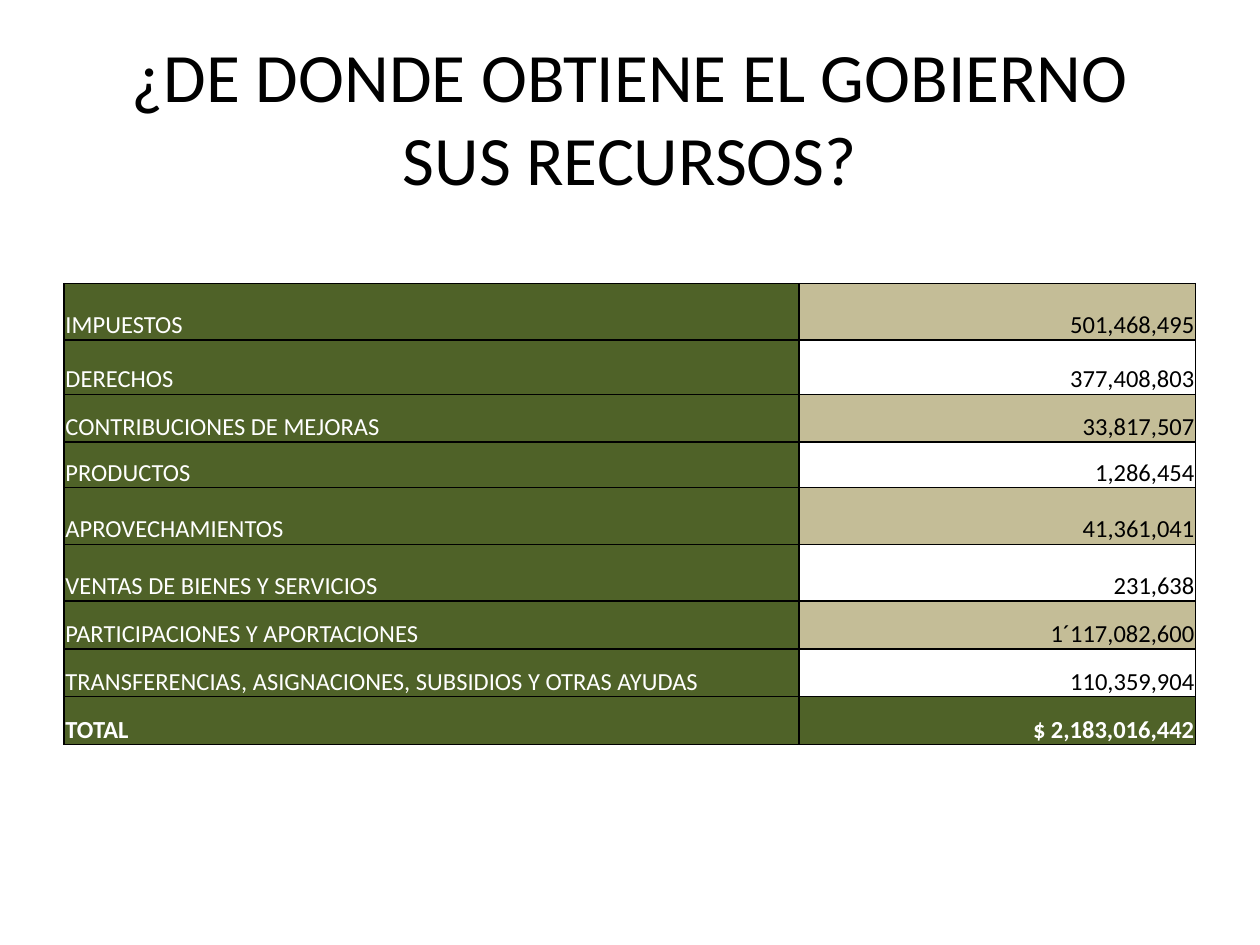
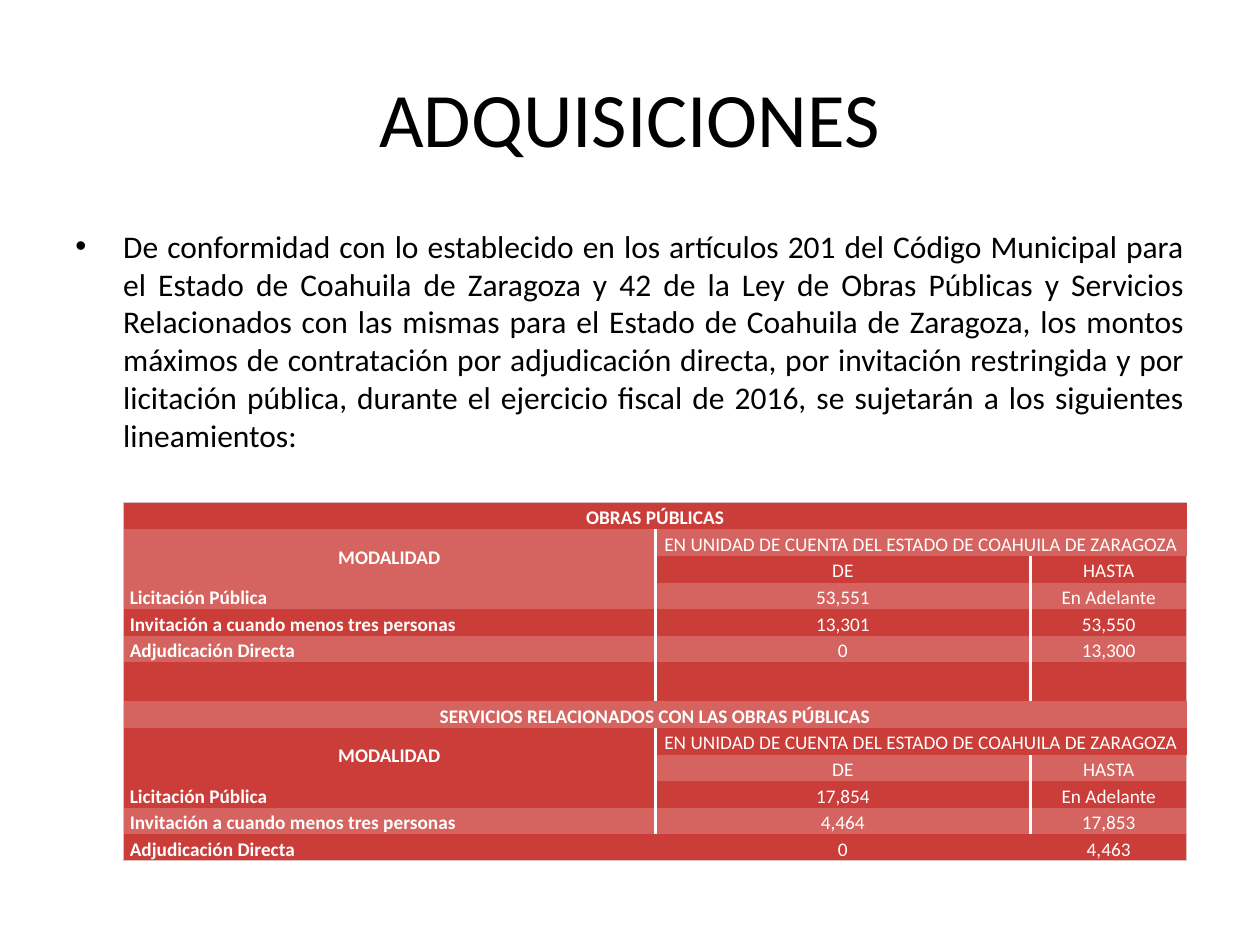
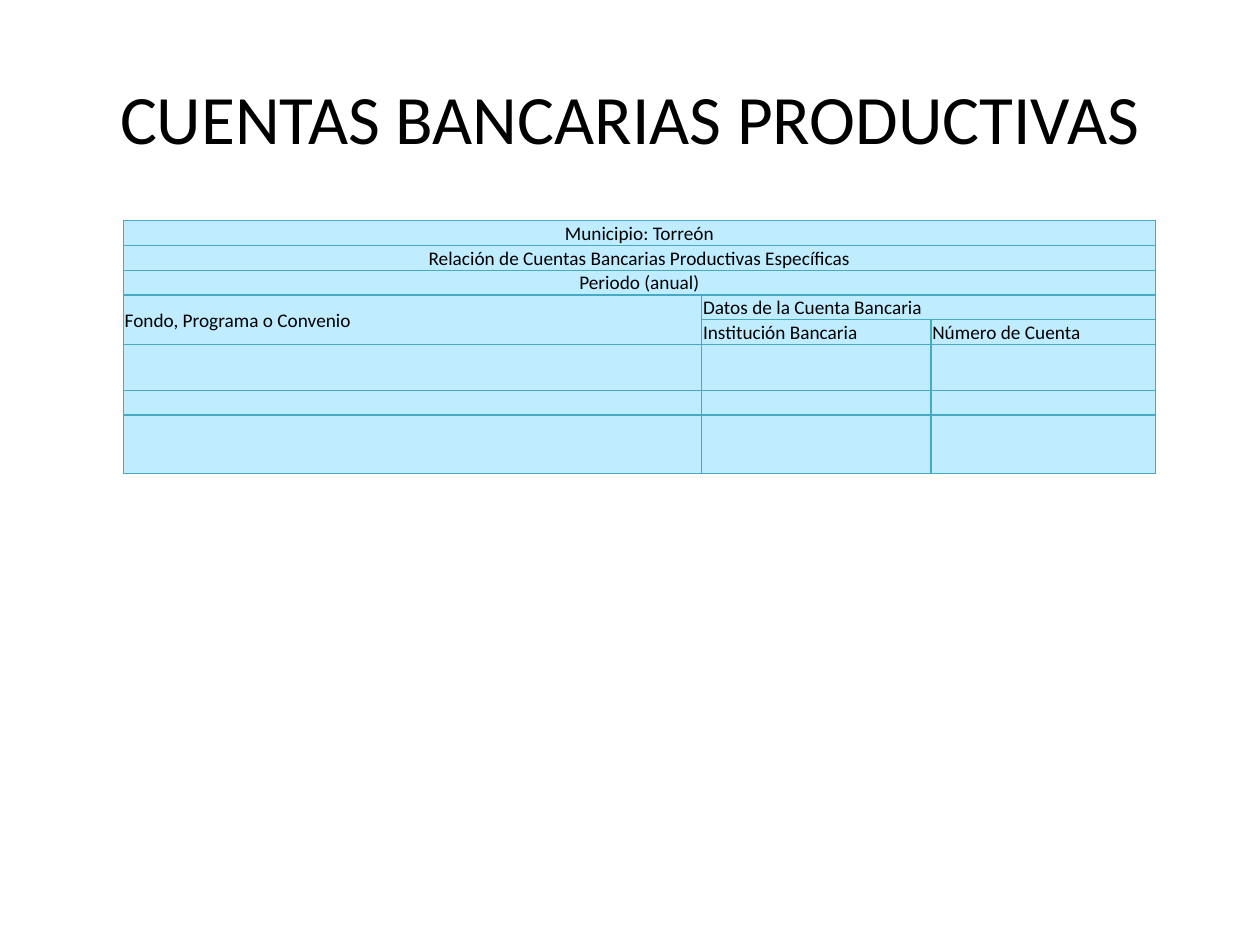
from lxml.etree import SubElement
from pptx import Presentation
from pptx.dml.color import RGBColor
from pptx.enum.text import MSO_ANCHOR, PP_ALIGN
from pptx.oxml.ns import qn
from pptx.util import Inches, Pt

# Shared look: a grid of 40 columns by 30 rows of quarter inches
COLS, ROWS, UNIT = 40, 30, Inches(0.25)
FACE = "Calibri"
BLACK = RGBColor(0x00, 0x00, 0x00)
WHITE = RGBColor(0xFF, 0xFF, 0xFF)
GREEN = RGBColor(0x4F, 0x62, 0x28)
SAND = RGBColor(0xC4, 0xBD, 0x97)
RED = RGBColor(0xCB, 0x3D, 0x39)
ROSE = RGBColor(0xD5, 0x64, 0x60)
PINK = RGBColor(0xDE, 0xBD, 0xBD)
SKY = RGBColor(0xBF, 0xEC, 0xFF)
TEAL = RGBColor(0x46, 0xAA, 0xC5)
PLAIN = "{2D5ABB26-0587-4C30-8999-92F81FD0307C}"  # no style, no grid
LEFT, MID, RIGHT = PP_ALIGN.LEFT, PP_ALIGN.CENTER, PP_ALIGN.RIGHT
SIDES = "LRTB"

INCOME = [
    ("IMPUESTOS", "501,468,495"),
    ("DERECHOS", "377,408,803"),
    ("CONTRIBUCIONES DE MEJORAS", "33,817,507"),
    ("PRODUCTOS", "1,286,454"),
    ("APROVECHAMIENTOS", "41,361,041"),
    ("VENTAS DE BIENES Y SERVICIOS", "231,638"),
    ("PARTICIPACIONES Y APORTACIONES", "1´117,082,600"),
    ("TRANSFERENCIAS, ASIGNACIONES, SUBSIDIOS Y OTRAS AYUDAS", "110,359,904"),
    ("TOTAL", "$ 2,183,016,442"),
]
RULE = (
    "De conformidad con lo establecido en los artículos 201 del Código Municipal "
    "para el Estado de Coahuila de Zaragoza y 42 de la Ley de Obras Públicas y "
    "Servicios Relacionados con las mismas para el Estado de Coahuila de Zaragoza, "
    "los montos máximos de contratación por adjudicación directa, por invitación "
    "restringida y por licitación pública, durante el ejercicio fiscal de 2016, se "
    "sujetarán a los siguientes lineamientos:"
)
ACCOUNTS = [
    ("Municipio: Torreón", "", ""),
    ("Relación de Cuentas Bancarias Productivas Específicas", "", ""),
    ("Periodo (anual)", "", ""),
    ("Fondo, Programa o Convenio", "Datos de la Cuenta Bancaria", ""),
    ("", "Institución Bancaria", "Número de Cuenta"),
] + [("", "", "")] * 3


def grid(*spans):
    return [round(span * UNIT) for span in spans]


def style(font, color, **form):
    form = {"name": FACE, **form}
    for key, value in form.items():
        setattr(font, key, value)
    font.color.rgb = color


def write(frame, words, color, align, size, bold=False, gap=None):
    para = frame.paragraphs[0]
    para.alignment = align
    if gap:
        para.line_spacing = gap
    if words:
        run = para.add_run()
        run.text = words
        style(run.font, color, size=Pt(size), bold=bold)
    else:  # keeps empty rows low
        SubElement(para._p, qn("a:endParaRPr"), sz=str(size * 100))
    return para


def box(slide, place, words, align, size, anchor):
    frame = slide.shapes.add_textbox(*grid(*place)).text_frame
    frame.word_wrap = True
    frame.vertical_anchor = anchor
    return write(frame, words, BLACK, align, size)


def title(slide, words, size=39.6):
    box(slide, (2, 1.2, 36, 5), words, MID, size, MSO_ANCHOR.MIDDLE)


def bullet(slide, words):
    para = box(slide, (2, 7, 36, 19.8), words, PP_ALIGN.JUSTIFY, 18, MSO_ANCHOR.TOP)
    props = para._p.get_or_add_pPr()
    indent = Inches(0.38)
    props.set("marL", str(indent))
    props.set("indent", str(-indent))
    SubElement(props, qn("a:buFont"), typeface="Arial")
    SubElement(props, qn("a:buChar"), char="•")


def edge(cell, lines):
    """Draw cell borders; lines maps a side to (colour, points)."""
    props = cell._tc.get_or_add_tcPr()
    sides = [side for side in SIDES if side in lines]
    for spot, side in enumerate(sides):
        color, width = lines[side]
        line = SubElement(props, qn(f"a:ln{side}"), w=str(Pt(width)))
        fill = SubElement(line, qn("a:solidFill"))
        SubElement(fill, qn("a:srgbClr"), val=str(color))
        props.insert(spot, line)


def table(slide, place, wide, high, data, look, merges=(), inset=0.01, top=0.01):
    """look(row, col) gives fill, border lines, anchor and text format."""
    size = (sum(wide), sum(high))
    frame = slide.shapes.add_table(len(high), len(wide), *grid(*place, *size))
    next(frame.element.iter(qn("a:tableStyleId"))).text = PLAIN
    body = frame.table
    for parts, key, spans in ((body.columns, "width", wide), (body.rows, "height", high)):
        for part, span in zip(parts, grid(*spans)):
            setattr(part, key, span)
    margins = {"margin_left": inset, "margin_right": inset,
               "margin_top": top, "margin_bottom": 0}
    for r, line in enumerate(data):
        for c, words in enumerate(line):
            cell = body.cell(r, c)
            fill, lines, anchor, form = look(r, c)
            for key, value in margins.items():
                setattr(cell, key, Inches(value))
            cell.vertical_anchor = anchor
            cell.fill.solid()
            cell.fill.fore_color.rgb = fill
            edge(cell, lines)
            write(cell.text_frame, words, **form)
    for r, c, down, across in merges:
        body.cell(r, c).merge(body.cell(r + down - 1, c + across - 1))


def works(name, rows):
    """One block of the purchasing table: heading, column names, limits."""
    head = "EN UNIDAD DE CUENTA DEL ESTADO DE COAHUILA DE ZARAGOZA"
    modes = ("Licitación Pública", "Invitación a cuando menos tres personas",
             "Adjudicación Directa")
    return [(name, "", ""), ("MODALIDAD", head, ""), ("", "DE", "HASTA")] + [
        (mode, *row) for mode, row in zip(modes, rows)]


def income(slide):
    title(slide, "¿DE DONDE OBTIENE EL GOBIERNO SUS RECURSOS?")
    last = len(INCOME) - 1
    lines = dict.fromkeys(SIDES, (BLACK, 1))

    def look(r, c):
        dark = c == 0 or r == last
        fill = GREEN if dark else (SAND, WHITE)[r % 2]
        form = dict(color=WHITE if dark else BLACK, align=RIGHT if c else LEFT,
                    size=14, bold=r == last)
        return fill, lines, MSO_ANCHOR.BOTTOM, form

    high = [1.8, 1.72, 1.52, 1.44, 1.8, 1.8, 1.52, 1.52, 1.52]
    table(slide, (2.04, 9), (23.32, 12.6), high, INCOME, look)


def buying(slide):
    title(slide, "ADQUISICIONES", 44)
    bullet(slide, RULE)
    data = works("OBRAS PÚBLICAS", [
        ("53,551", "En Adelante"), ("13,301", "53,550"), ("0", "13,300")])
    gap = len(data)
    data += [("", "", "")] + works("SERVICIOS RELACIONADOS CON LAS OBRAS PÚBLICAS", [
        ("17,854", "En Adelante"), ("4,464", "17,853"), ("0", "4,463")])
    last, heads = len(data) - 1, (0, gap + 1)
    thin, thick = (PINK, 0.75), (WHITE, 2)

    def look(r, c):
        lines = {"L": thin} if c == 0 else {"R": thin} if c == 2 else {}
        if r not in (*heads, last) and c < 2:
            lines["LR"[1 - c]] = thick
        if r in (0, last):
            lines["B" if r else "T"] = thin
        mode = c == 0 and r % (gap + 1) > 2
        form = dict(color=WHITE, align=LEFT if mode else MID, size=11,
                    bold=c == 0, gap=1.15)
        return (RED, ROSE)[r % 2], lines, MSO_ANCHOR.MIDDLE, form

    high = [1.24 if r == gap else 0.8 for r in range(len(data))]
    merges = [spot for r in heads
              for spot in ((r, 0, 1, 3), (r + 1, 0, 2, 1), (r + 1, 1, 1, 2))]
    table(slide, (3.92, 15.96), (16.88, 11.92, 4.96), high, data, look,
          merges, inset=0.05, top=0)


def banks(slide):
    title(slide, "CUENTAS BANCARIAS PRODUCTIVAS")
    lines = dict.fromkeys(SIDES, (TEAL, 0.75))

    def look(r, c):
        form = dict(color=BLACK, align=MID if r < 3 else LEFT, size=11)
        return SKY, lines, MSO_ANCHOR.MIDDLE, form

    high = [0.79] * 5 + [1.44, 0.79, 1.86]
    merges = [(r, 0, 1, 3) for r in range(3)] + [(3, 0, 2, 1), (3, 1, 1, 2)]
    table(slide, (3.92, 7), (18.36, 7.28, 7.12), high, ACCOUNTS, look, merges)


def main():
    deck = Presentation()
    deck.slide_width, deck.slide_height = COLS * UNIT, ROWS * UNIT
    for build in (income, buying, banks):
        build(deck.slides.add_slide(deck.slide_layouts[6]))
    deck.save("out.pptx")


if __name__ == "__main__":
    main()
